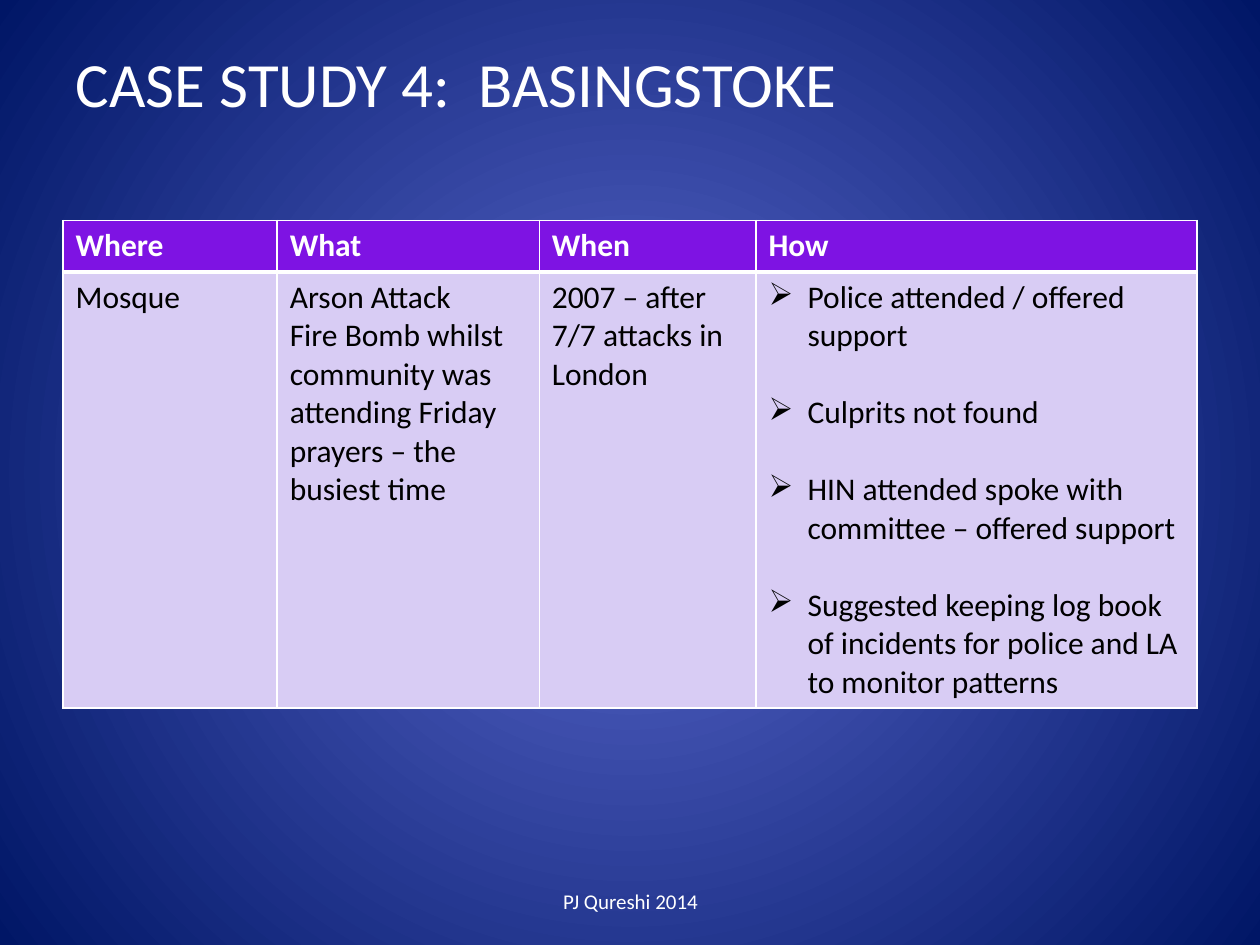
from lxml.etree import SubElement
from pptx import Presentation
from pptx.dml.color import RGBColor
from pptx.enum.text import MSO_ANCHOR, PP_ALIGN
from pptx.oxml import parse_xml
from pptx.oxml.ns import nsdecls, qn
from pptx.util import Inches, Pt

COLORS = {"glow": "5B69CE", "edge": "001666", "white": "FFFFFF",
          "black": "000000", "head": "7E13E3", "body": "D8CCF4"}
FONT = "Calibri"
WIDTHS = [1.7, 2.08, 1.72, 3.5]
HEIGHTS = [0.41, 3.45]
HEADS = ["Where", "What", "When", "How"]
FACTS = [
    ["Mosque"],
    ["Arson Attack",
     "Fire Bomb whilst community was attending Friday prayers – the busiest time"],
    ["2007 – after 7/7 attacks in London"],
    ["Police attended / offered support",
     "Culprits not found",
     "HIN attended spoke with committee – offered support",
     "Suggested keeping log book of incidents for police and LA to monitor patterns"],
]


def color(name):
    return RGBColor.from_string(COLORS[name])


def write(frame, lines, size=18, ink="white", bold=False,
          align=PP_ALIGN.LEFT, anchor=MSO_ANCHOR.TOP, bullet=None, gap=0):
    """Fill a text frame with one paragraph per line."""
    frame.word_wrap = True
    frame.vertical_anchor = anchor
    for i, line in enumerate(lines):
        para = frame.paragraphs[0] if i == 0 else frame.add_paragraph()
        para.alignment = align
        para.space_before = Pt(gap if i else 0)
        run = para.add_run()
        run.text = line
        font = run.font
        font.name, font.size, font.bold = FONT, Pt(size), bold
        font.color.rgb = color(ink)
        if bullet:
            props = para._p.get_or_add_pPr()
            props.set("marL", str(Inches(0.31)))
            props.set("indent", str(-Inches(0.31)))
            SubElement(props, qn("a:buChar")).set("char", bullet)


def paint(slide):
    """Give the slide a round gradient background."""
    fill = slide.background.fill
    fill.gradient()
    for stop, name in zip(fill.gradient_stops, ["glow", "edge"]):
        stop.color.rgb = color(name)
    grad = slide.element.find(".//" + qn("a:gradFill"))
    grad.replace(grad.find(qn("a:lin")), parse_xml(
        f'<a:path {nsdecls("a")} path="circle">'
        '<a:fillToRect l="50000" t="50000" r="50000" b="50000"/></a:path>'))


def border(cell, **widths):
    """Draw white cell borders, widths in points by side."""
    props = cell._tc.get_or_add_tcPr()
    for i, side in enumerate("LRTB"):
        width = Pt(widths.get(side, 1))
        props.insert(i, parse_xml(
            f'<a:ln{side} {nsdecls("a")} w="{width}"><a:solidFill>'
            f'<a:srgbClr val="{COLORS["white"]}"/></a:solidFill></a:ln{side}>'))


def style(cell, fill, **widths):
    cell.fill.solid()
    cell.fill.fore_color.rgb = color(fill)
    border(cell, **widths)


def add_grid(slide):
    grid = slide.shapes.add_table(
        2, len(HEADS), Inches(0.5), Inches(1.75),
        Inches(sum(WIDTHS)), Inches(sum(HEIGHTS))).table
    for row, high in zip(grid.rows, HEIGHTS):
        row.height = Inches(high)
    for i, (wide, head, facts) in enumerate(zip(WIDTHS, HEADS, FACTS)):
        grid.columns[i].width = Inches(wide)
        top, low = grid.cell(0, i), grid.cell(1, i)
        write(top.text_frame, [head], bold=True)
        style(top, "head", B=3)
        # Only the last column is a spaced, bulleted list
        marks = {"bullet": "➢", "gap": 22} if head == "How" else {}
        write(low.text_frame, facts, ink="black", **marks)
        style(low, "body", T=3)


def place(shape, left, top, width, height):
    shape.left, shape.top = Inches(left), Inches(top)
    shape.width, shape.height = Inches(width), Inches(height)


def main():
    deck = Presentation()
    deck.slide_width, deck.slide_height = Inches(10), Inches(7.5)
    slide = deck.slides.add_slide(deck.slide_layouts[5])
    paint(slide)

    # Title
    title = slide.shapes.title
    place(title, 0.5, 0.3, 9, 1.25)
    write(title.text_frame, ["CASE STUDY 4:  BASINGSTOKE"], size=36)

    # Case table
    add_grid(slide)

    # Footer
    foot = slide.shapes.add_textbox(
        Inches(3.42), Inches(6.95), Inches(3.17), Inches(0.4))
    write(foot.text_frame, ["PJ Qureshi 2014"], size=12,
          align=PP_ALIGN.CENTER, anchor=MSO_ANCHOR.MIDDLE)

    deck.save("out.pptx")


if __name__ == "__main__":
    main()
